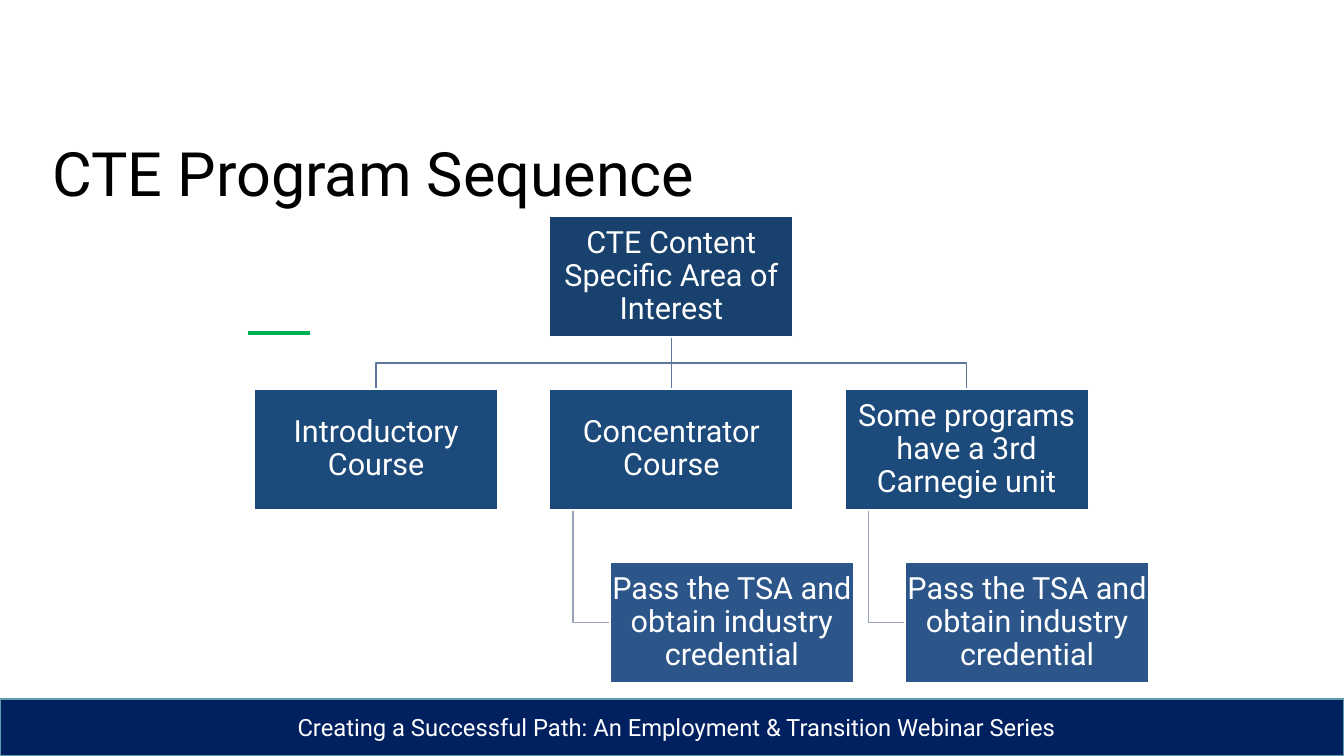
from lxml import etree
from pptx import Presentation
from pptx.dml.color import RGBColor
from pptx.enum import shapes, text
from pptx.oxml import ns
from pptx.util import Inches, Pt

COLORS = {
    "white": "FFFFFF", "black": "000000", "navy": "002060", "teal": "5F9CAE",
    "green": "00B050", "root": "18426D", "course": "1B4A7B", "result": "2C568A",
    "branch": "60759A", "twig": "98A2B7",
}
FONT = "Roboto"
SLIDE_WIDTH, SLIDE_HEIGHT = 21.99, 12.37
BOX_WIDTH, BOX_HEIGHT = 3.99, 1.99
COLUMN_STEP, ROW_STEP = 4.83, 2.83
RESULT_INDENT = 0.99
TWIG_INDENT = 0.39
COURSES = [
    ("Introductory Course", None),
    ("Concentrator Course", "Pass the TSA and obtain industry credential"),
    ("Some programs have a 3rd Carnegie unit", "Pass the TSA and obtain industry credential"),
]


def color(name):
    return RGBColor.from_string(COLORS[name])


def set_line(shape, name, width):
    shape.line.color.rgb = color(name)
    shape.line.width = Pt(width)


def write(shape, words, size, ink="white", align=text.PP_ALIGN.LEFT,
          anchor=text.MSO_ANCHOR.TOP, inset=0.1, spacing=1.0):
    frame = shape.text_frame
    frame.word_wrap = True
    frame.vertical_anchor = anchor
    frame.margin_left = frame.margin_right = Inches(inset)
    frame.margin_top = frame.margin_bottom = Inches(min(inset, 0.05))
    paragraph = frame.paragraphs[0]
    paragraph.alignment = align
    paragraph.line_spacing = spacing
    run = paragraph.add_run()
    run.text = words
    run.font.size = Pt(size)
    run.font.name = FONT
    run.font.color.rgb = color(ink)


def add_box(slide, left, top, width, height, fill, line, line_width=2):
    box = slide.shapes.add_shape(shapes.MSO_SHAPE.RECTANGLE, Inches(left), Inches(top),
                                 Inches(width), Inches(height))
    box.shadow.inherit = False
    box.fill.solid()
    box.fill.fore_color.rgb = color(fill)
    set_line(box, line, line_width)
    return box


def add_straight(slide, start, end, name, width):
    connector = slide.shapes.add_connector(shapes.MSO_CONNECTOR.STRAIGHT,
                                           *map(Inches, start + end))
    set_line(connector, name, width)
    etree.SubElement(connector._element.spPr, ns.qn("a:effectLst"))
    return connector


def add_bent(slide, points, name):
    """Draw an open line with right-angled corners through the points."""
    start, *rest = [(Inches(x), Inches(y)) for x, y in points]
    builder = slide.shapes.build_freeform(*start)
    builder.add_line_segments(rest, close=False)
    bent = builder.convert_to_shape()
    bent.shadow.inherit = False
    bent.fill.background()
    set_line(bent, name, 2)


def add_node(slide, left, top, words, fill):
    node = add_box(slide, left, top, BOX_WIDTH, BOX_HEIGHT, fill, "white")
    write(node, words, 36, align=text.PP_ALIGN.CENTER, anchor=text.MSO_ANCHOR.MIDDLE,
          inset=0.03, spacing=0.9)
    return node


def add_footer(slide, left, top, width, height):
    add_box(slide, left, top, width, height, "navy", "teal")
    label = slide.shapes.add_textbox(Inches(left + 4.77), Inches(top + 0.18),
                                     Inches(12.8), Inches(0.57))
    write(label, "Creating a Successful Path: An Employment & Transition Webinar Series", 28)


def add_title(slide, left, top, width, height):
    title = slide.shapes.add_textbox(Inches(left), Inches(top), Inches(width), Inches(height))
    write(title, "CTE Program Sequence", 72, ink="black", anchor=text.MSO_ANCHOR.BOTTOM)
    title.text_frame.margin_bottom = Inches(0.1)


def add_sequence(slide, left, top):
    """Draw the tree of courses: lines first, so that the boxes lie over them."""
    root_left = left + COLUMN_STEP
    root_center = root_left + BOX_WIDTH / 2
    root_bottom = top + BOX_HEIGHT
    course_top = top + ROW_STEP
    result_top = course_top + ROW_STEP
    middle = (root_bottom + course_top) / 2
    columns = [left + i * COLUMN_STEP for i in range(len(COURSES))]

    for column, (_, result) in zip(columns, COURSES):
        if result:
            twig = column + TWIG_INDENT
            twig_end = result_top + BOX_HEIGHT / 2
            add_bent(slide, [(twig, course_top + BOX_HEIGHT), (twig, twig_end),
                             (column + RESULT_INDENT, twig_end)], "twig")
    for column in (columns[0], columns[-1]):
        center = column + BOX_WIDTH / 2
        add_bent(slide, [(root_center, root_bottom), (root_center, middle),
                         (center, middle), (center, course_top)], "branch")
    stem = add_straight(slide, (root_center, root_bottom), (root_center, course_top),
                        "branch", 2)

    root = add_node(slide, root_left, top, "CTE Content Specific Area of Interest", "root")
    courses = []
    for column, (course, result) in zip(columns, COURSES):
        courses.append(add_node(slide, column, course_top, course, "course"))
        if result:
            add_node(slide, column + RESULT_INDENT, result_top, result, "result")
    stem.begin_connect(root, 2)
    stem.end_connect(courses[1], 0)


def main():
    presentation = Presentation()
    presentation.slide_width = Inches(SLIDE_WIDTH)
    presentation.slide_height = Inches(SLIDE_HEIGHT)
    slide = presentation.slides.add_slide(presentation.slide_layouts[6])
    add_footer(slide, 0, 11.44, SLIDE_WIDTH, 0.92)
    add_straight(slide, (4.05, 5.45), (5.08, 5.45), "green", 5.19)
    add_title(slide, 0.76, 2.25, 17.51, 1.27)
    add_sequence(slide, 4.16, 3.53)
    presentation.save("out.pptx")


if __name__ == "__main__":
    main()
